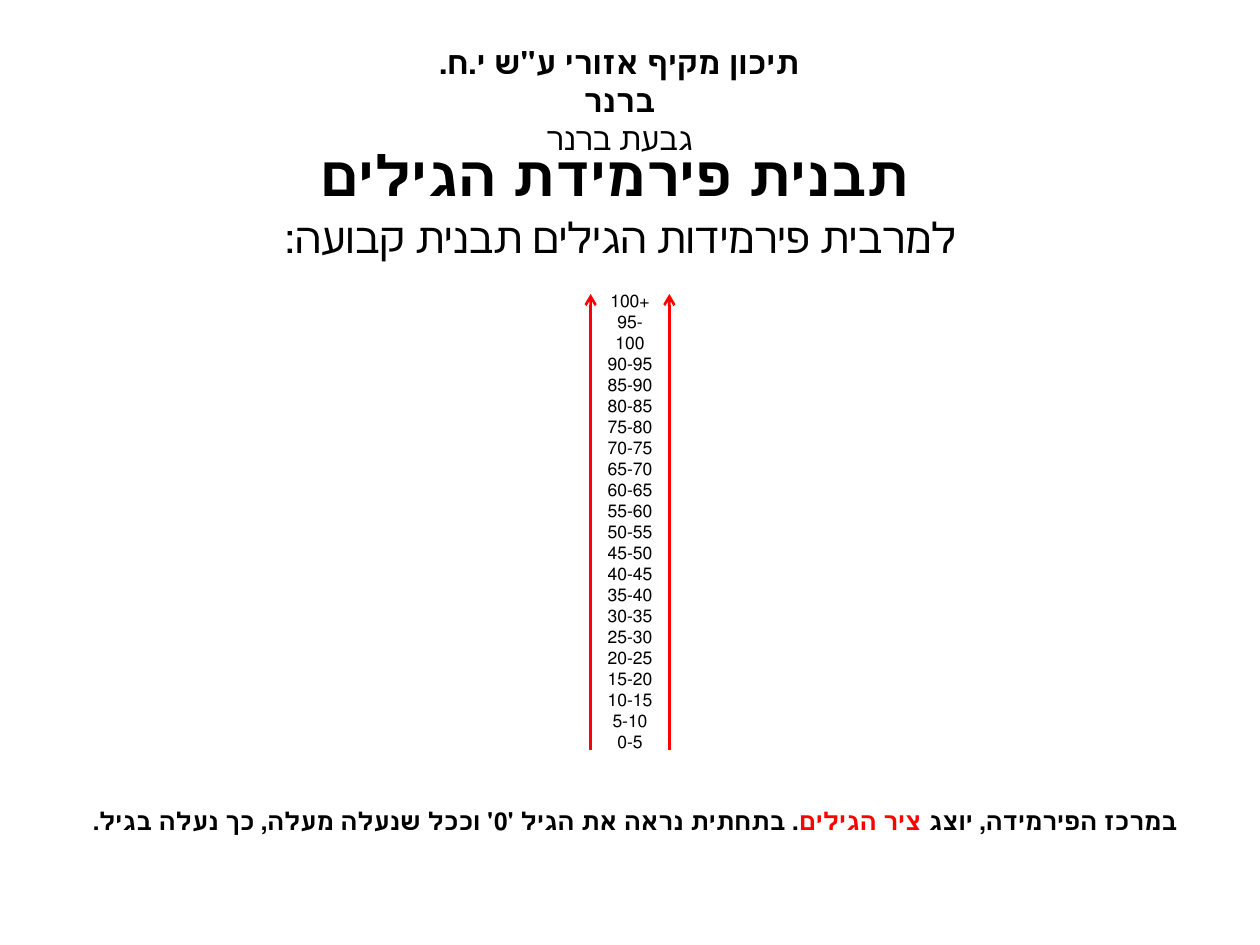
from pptx import Presentation
from pptx.dml.color import RGBColor
from pptx.enum import shapes, text
from pptx.oxml import ns
from pptx.util import Pt
from lxml import etree

BLACK, RED = "000000", "FF0000"

SCHOOL = [[("תיכון מקיף אזורי ע\"ש י.ח. ברנר\n", BLACK, True), ("גבעת ברנר", BLACK, False)]]
TITLE = [[("תבנית פירמידת הגילים", BLACK, True)]]
SUBTITLE = [[("למרבית פירמידות הגילים תבנית קבועה:", BLACK, False)]]
EXPLANATION = [[
    ("במרכז הפירמידה, יוצג ", BLACK, True),
    ("ציר הגילים", RED, True),
    (". בתחתית נראה את הגיל '0' וככל שנעלה מעלה, כך נעלה בגיל.", BLACK, True),
]]
AGES = ["100+"] + [f"{age}-{age + 5}" for age in range(95, -1, -5)]
AGE_GROUPS = [AGES[:14], AGES[14:15], AGES[15:]]
AGE_AXIS = [[("\n".join(group), BLACK, False)] for group in AGE_GROUPS]

AXIS_LEFT, AXIS_WIDTH = 337.5, 45
ARROW_TOP, ARROW_BOTTOM = 168, 428.5


def color(value):
    return RGBColor.from_string(value)


def add_text(slide, paragraphs, left, top, width, height, size, font="Calibri"):
    frame = slide.shapes.add_textbox(Pt(left), Pt(top), Pt(width), Pt(height)).text_frame
    frame.word_wrap = True
    frame.auto_size = text.MSO_AUTO_SIZE.SHAPE_TO_FIT_TEXT
    for index, runs in enumerate(paragraphs):
        paragraph = frame.add_paragraph() if index else frame.paragraphs[0]
        paragraph.alignment = text.PP_ALIGN.CENTER
        paragraph._p.get_or_add_pPr().set("rtl", "1")
        for content, run_color, bold in runs:
            for line_index, line in enumerate(content.split("\n")):
                if line_index:
                    paragraph.add_line_break()
                if line:
                    run = paragraph.add_run()
                    run.text = line
                    run.font.name = font
                    run.font.size = Pt(size)
                    run.font.bold = bold
                    run.font.color.rgb = color(run_color)


def add_arrow(slide, x):
    arrow = slide.shapes.add_connector(
        shapes.MSO_CONNECTOR.STRAIGHT, Pt(x), Pt(ARROW_BOTTOM), Pt(x), Pt(ARROW_TOP))
    arrow.line.color.rgb = color(RED)
    arrow.line.width = Pt(1.5)
    etree.SubElement(arrow.line._get_or_add_ln(), ns.qn("a:tailEnd"), type="arrow")
    etree.SubElement(arrow._element.spPr, ns.qn("a:effectLst"))


def main():
    presentation = Presentation()
    presentation.slide_width, presentation.slide_height = Pt(720), Pt(540)
    slide = presentation.slides.add_slide(presentation.slide_layouts[6])
    add_text(slide, SCHOOL, 229.5, 21, 249, 51, 18, "Roboto")
    add_text(slide, TITLE, 156, 77, 391, 46, 32)
    add_text(slide, SUBTITLE, 76.5, 117.5, 556, 36, 24)
    add_text(slide, EXPLANATION, 20, 457, 686, 24.5, 14)
    add_text(slide, AGE_AXIS, AXIS_LEFT, 162, AXIS_WIDTH, 273.5, 10)
    for x in (AXIS_LEFT, AXIS_LEFT + AXIS_WIDTH):
        add_arrow(slide, x)
    presentation.save("out.pptx")


if __name__ == "__main__":
    main()
